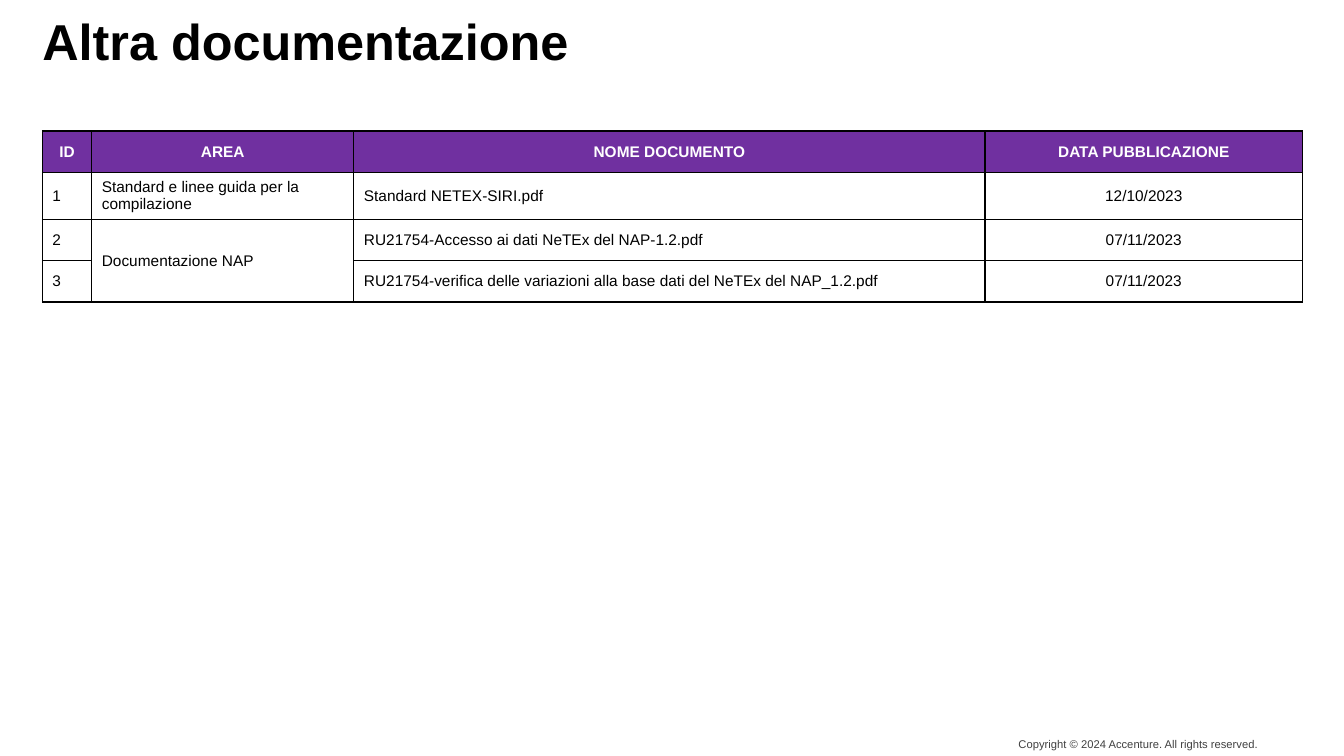
from lxml.etree import SubElement
from pptx import Presentation
from pptx.dml.color import RGBColor
from pptx.enum.text import MSO_ANCHOR, PP_ALIGN
from pptx.oxml.ns import qn
from pptx.util import Inches, Pt

# Content
TITLE = "Altra documentazione"
COPYRIGHT = "Copyright © 2024 Accenture. All rights reserved."
HEADERS = ["ID", "AREA", "NOME DOCUMENTO", "DATA PUBBLICAZIONE"]
# An area of None continues the area of the row above
DOCUMENTS = [
    ("1", "Standard e linee guida per la compilazione", "Standard NETEX-SIRI.pdf", "12/10/2023"),
    ("2", "Documentazione NAP", "RU21754-Accesso ai dati NeTEx del NAP-1.2.pdf", "07/11/2023"),
    ("3", None, "RU21754-verifica delle variazioni alla base dati del NeTEx del NAP_1.2.pdf", "07/11/2023"),
]
COLUMN_WIDTHS = [0.49, 2.6, 6.26, 3.15]
ROW_HEIGHT = 0.41
LEFT, CONTENT_WIDTH, TABLE_TOP = 0.42, 12.5, 1.3
AREA_COLUMN, DATE_COLUMN = 1, 3

THEME = {
    "font": "Arial", "black": "000000", "white": "FFFFFF", "purple": "7030A0",
    "grey": "404040", "title": 36, "table": 11, "footer": 8, "border": 1,
}


def write_text(frame, text, size, color="black", bold=False,
               align=PP_ALIGN.LEFT, space_after=0):
    frame.word_wrap = True
    paragraph = frame.paragraphs[0]
    paragraph.alignment = align
    paragraph.space_after = Pt(space_after)
    run = paragraph.add_run()
    run.text = text
    run.font.name = THEME["font"]
    run.font.size = Pt(THEME[size])
    run.font.bold = bold
    run.font.color.rgb = RGBColor.from_string(THEME[color])


def add_text_box(slide, box, text, size, anchor=MSO_ANCHOR.TOP, inset_top=0, **text_format):
    frame = slide.shapes.add_textbox(*map(Inches, box)).text_frame
    frame.margin_left = frame.margin_right = frame.margin_bottom = 0
    frame.margin_top = Inches(inset_top)
    frame.vertical_anchor = anchor
    write_text(frame, text, size, space_after=12, **text_format)


def style_cell(cell, fill):
    cell.vertical_anchor = MSO_ANCHOR.MIDDLE
    properties = cell._tc.get_or_add_tcPr()
    for side in ("a:lnL", "a:lnR", "a:lnT", "a:lnB"):
        line = SubElement(properties, qn(side), w=str(Pt(THEME["border"])))
        solid = SubElement(line, qn("a:solidFill"))
        SubElement(solid, qn("a:srgbClr"), val=THEME["black"])
    cell.fill.solid()
    cell.fill.fore_color.rgb = RGBColor.from_string(THEME[fill])


def add_document_table(slide):
    rows = [HEADERS, *DOCUMENTS]
    table = slide.shapes.add_table(
        len(rows), len(HEADERS), Inches(LEFT), Inches(TABLE_TOP),
        Inches(CONTENT_WIDTH), Inches(ROW_HEIGHT * len(rows))).table
    table.horz_banding = False
    for column, width in zip(table.columns, COLUMN_WIDTHS):
        column.width = Inches(width)
    for row_index, values in enumerate(rows):
        table.rows[row_index].height = Inches(ROW_HEIGHT)
        is_header = row_index == 0
        for column_index, value in enumerate(values):
            cell = table.cell(row_index, column_index)
            style_cell(cell, "purple" if is_header else "white")
            if value is None:
                table.cell(row_index - 1, AREA_COLUMN).merge(cell)
                continue
            centred = is_header or column_index == DATE_COLUMN
            write_text(cell.text_frame, value, "table", bold=is_header,
                       color="white" if is_header else "black",
                       align=PP_ALIGN.CENTER if centred else PP_ALIGN.LEFT)


def main():
    presentation = Presentation()
    presentation.slide_width, presentation.slide_height = Inches(13.33), Inches(7.5)
    slide = presentation.slides.add_slide(presentation.slide_layouts[6])

    # Footer, table and title
    add_text_box(slide, (9.68, 7.27, 2.8, 0.22), COPYRIGHT, "footer",
                 anchor=MSO_ANCHOR.MIDDLE, color="grey", align=PP_ALIGN.RIGHT)
    add_document_table(slide)
    add_text_box(slide, (LEFT, 0.05, CONTENT_WIDTH, 0.73), TITLE, "title",
                 inset_top=0.05, bold=True)
    presentation.save("out.pptx")


if __name__ == "__main__":
    main()
